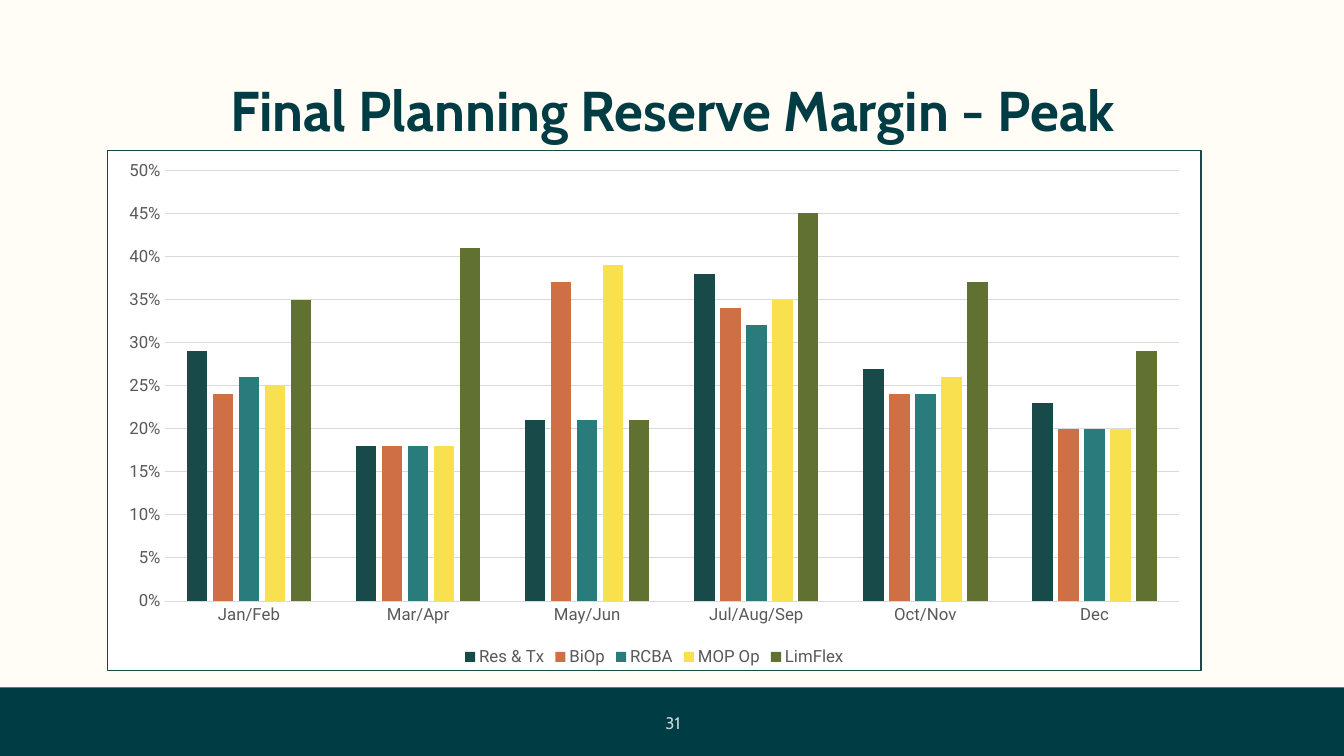
from collections import namedtuple

from lxml import etree
from pptx import Presentation
from pptx.chart.data import CategoryChartData
from pptx.dml.color import RGBColor
from pptx.enum.chart import XL_CHART_TYPE, XL_LEGEND_POSITION, XL_TICK_MARK
from pptx.enum.shapes import MSO_SHAPE
from pptx.enum.text import MSO_ANCHOR, MSO_AUTO_SIZE, PP_ALIGN
from pptx.oxml import parse_xml
from pptx.oxml.ns import nsdecls, qn
from pptx.util import Cm, Pt

COLUMNS = XL_CHART_TYPE.COLUMN_CLUSTERED
LEGEND_BOTTOM = XL_LEGEND_POSITION.BOTTOM
NO_TICKS = XL_TICK_MARK.NONE
RECTANGLE = MSO_SHAPE.RECTANGLE
MIDDLE = MSO_ANCHOR.MIDDLE
CENTER = PP_ALIGN.CENTER
NO_AUTOFIT = MSO_AUTO_SIZE.NONE

COLORS = {
    "cream": "FFFDF5", "deep_teal": "003C44", "page_number": "F9FBFD",
    "black": "000000", "white": "FFFFFF", "label": "595959", "grid": "D9D9D9",
    "pine": "194A4A", "rust": "CE6F45", "teal": "2A7C7C",
    "yellow": "F8E04E", "olive": "617131",
}
HEADING_FONT = "Cabin"
CHART_FONT = "Roboto"

PERIODS = ["Jan/Feb", "Mar/Apr", "May/Jun", "Jul/Aug/Sep", "Oct/Nov", "Dec"]
MARGINS = [
    ("Res & Tx", "pine", (0.29, 0.18, 0.21, 0.38, 0.27, 0.23)),
    ("BiOp", "rust", (0.24, 0.18, 0.37, 0.34, 0.24, 0.20)),
    ("RCBA", "teal", (0.26, 0.18, 0.21, 0.32, 0.24, 0.20)),
    ("MOP Op", "yellow", (0.25, 0.18, 0.39, 0.35, 0.26, 0.20)),
    ("LimFlex", "olive", (0.35, 0.41, 0.21, 0.45, 0.37, 0.29)),
]

Box = namedtuple("Box", "left top width height")
PAGE = Box(0, 0, Cm(33.87), Cm(19.05))
TITLE = Box(Cm(2.34), Cm(1.02), Cm(29.21), Cm(3.68))
CHART = Box(Cm(2.7), Cm(3.77), Cm(27.58), Cm(13.15))
FOOTER = Box(0, Cm(17.32), PAGE.width, Cm(1.73))


def color(name):
    return RGBColor.from_string(COLORS[name])


def set_font(font, name, size, color_name, bold=None):
    font.name = name
    font.size = Pt(size)
    font.bold = bold
    font.color.rgb = color(color_name)


def add_footer(page, box):
    band = page.shapes.add_shape(RECTANGLE, *box)
    band.shadow.inherit = False
    band.fill.solid()
    band.fill.fore_color.rgb = color("deep_teal")
    band.line.fill.background()

    # Page number, centred in the band
    width, height = Cm(1.52), Cm(1.09)
    number = page.shapes.add_textbox(
        box.left + (box.width - width) // 2 - Cm(0.1), box.top + Cm(0.36), width, height)
    frame = number.text_frame
    frame.word_wrap = True
    frame.vertical_anchor = MIDDLE
    frame.margin_left = frame.margin_top = frame.margin_bottom = Cm(0.25)
    frame.margin_right = 0
    para = frame.paragraphs[0]
    para.text = "31"
    para.alignment = CENTER
    set_font(para.font, HEADING_FONT, 12, "page_number")
    for tint in para.font._element.iter(qn("a:srgbClr")):
        etree.SubElement(tint, qn("a:alpha"), val="80000")


def add_title(page, box):
    title = page.shapes.title
    title.left, title.top, title.width, title.height = box
    frame = title.text_frame
    frame.auto_size = NO_AUTOFIT
    frame.vertical_anchor = MIDDLE
    para = frame.paragraphs[0]
    para.text = "Final Planning Reserve Margin - Peak"
    para.alignment = CENTER
    para.line_spacing = 0.9
    set_font(para.font, HEADING_FONT, 40, "deep_teal", bold=True)


def frame_chart(chart):
    """Give the chart area its fill and border, and place the plot inside it."""
    space = chart._chartSpace
    space.find(qn("c:chart")).addnext(parse_xml(
        f'<c:spPr {nsdecls("c", "a")}>'
        f'<a:solidFill><a:srgbClr val="{COLORS["white"]}"/></a:solidFill>'
        f'<a:ln w="9525"><a:solidFill><a:srgbClr val="{COLORS["pine"]}"/></a:solidFill></a:ln>'
        '</c:spPr>'))
    plot_area = space.find(".//" + qn("c:plotArea"))
    for layout in plot_area.findall(qn("c:layout")):
        plot_area.remove(layout)
    plot_area.insert(0, parse_xml(
        f'<c:layout {nsdecls("c")}><c:manualLayout><c:layoutTarget val="inner"/>'
        '<c:xMode val="edge"/><c:yMode val="edge"/><c:x val="0.052"/><c:y val="0.039"/>'
        '<c:w val="0.928"/><c:h val="0.827"/></c:manualLayout></c:layout>'))


def add_margin_chart(page, box):
    data = CategoryChartData(number_format="0%")
    data.categories = PERIODS
    for name, _, values in MARGINS:
        data.add_series(name, values)
    chart = page.shapes.add_chart(COLUMNS, *box, data).chart
    set_font(chart.font, CHART_FONT, 12, "black")
    chart.has_title = False
    frame_chart(chart)

    # Columns
    plot = chart.plots[0]
    plot.vary_by_categories = False
    plot.gap_width = 219
    plot.overlap = -27
    for series, (_, color_name, _) in zip(plot.series, MARGINS):
        series.format.fill.solid()
        series.format.fill.fore_color.rgb = color(color_name)

    # Axes
    periods, percent = chart.category_axis, chart.value_axis
    for axis in (periods, percent):
        axis.major_tick_mark = axis.minor_tick_mark = NO_TICKS
        set_font(axis.tick_labels.font, CHART_FONT, 12, "label")
    percent.minimum_scale, percent.maximum_scale, percent.major_unit = 0, 0.5, 0.05
    percent.tick_labels.number_format = "0%"
    percent.tick_labels.number_format_is_linked = False
    percent.format.line.fill.background()
    percent.has_major_gridlines = True
    for line in (periods.format.line, percent.major_gridlines.format.line):
        line.color.rgb = color("grid")
        line.width = Pt(0.75)

    # Legend
    chart.has_legend = True
    chart.legend.position = LEGEND_BOTTOM
    chart.legend.include_in_layout = False
    set_font(chart.legend.font, CHART_FONT, 12, "label")


def main():
    deck = Presentation()
    deck.slide_width, deck.slide_height = PAGE.width, PAGE.height
    page = deck.slides.add_slide(deck.slide_layouts.get_by_name("Title Only"))
    page.background.fill.solid()
    page.background.fill.fore_color.rgb = color("cream")
    add_footer(page, FOOTER)
    add_title(page, TITLE)
    add_margin_chart(page, CHART)
    deck.save("out.pptx")


if __name__ == "__main__":
    main()
